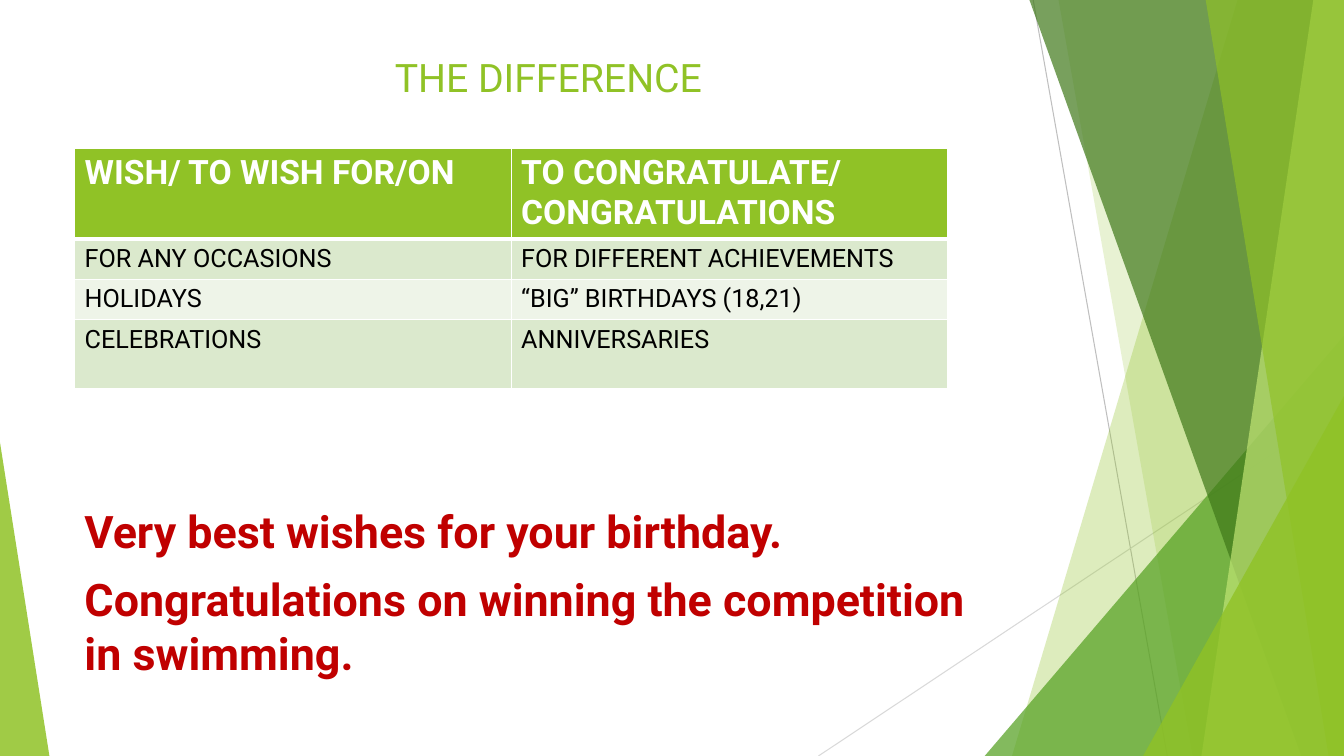
"""Build the slide comparing wishes with congratulations."""
import lxml.etree
import pptx
import pptx.dml.color
import pptx.enum.shapes
import pptx.enum.text
import pptx.oxml
import pptx.oxml.ns
import pptx.util
from dataclasses import dataclass

Pt = pptx.util.Pt
qn = pptx.oxml.ns.qn
SubElement = lxml.etree.SubElement


@dataclass(frozen=True)
class Theme:
    font: str = "Roboto"
    lime: str = "90C226"
    green: str = "54A021"
    forest: str = "3F7819"
    pale: str = "C0E474"
    silver: str = "BFBFBF"
    mist: str = "D9D9D9"
    white: str = "FFFFFF"
    black: str = "000000"
    red: str = "C00000"
    band_dark: str = "DBE9CD"
    band_light: str = "EEF4E8"
    title_size: int = 28
    header_size: int = 24
    cell_size: int = 18
    example_size: int = 32


theme = Theme()
WIDTH, HEIGHT = 960, 540


def rgb(value):
    return pptx.dml.color.RGBColor.from_string(value)


def set_font(para, size, colour, bold=False):
    para.font.name = theme.font
    para.font.size = Pt(size)
    para.font.bold = bold
    para.font.color.rgb = rgb(colour)


deck = pptx.Presentation()
deck.slide_width, deck.slide_height = Pt(WIDTH), Pt(HEIGHT)
page = deck.slides.add_slide(deck.slide_layouts[6])

for start_x, start_y, end_x, colour in [
    (738, 0, 833.8, theme.silver),
    (WIDTH, 290.2, 584.6, theme.mist),
]:
    line = page.shapes.add_connector(
        pptx.enum.shapes.MSO_CONNECTOR.STRAIGHT,
        Pt(start_x), Pt(start_y), Pt(end_x), Pt(HEIGHT))
    line.line.color.rgb = rgb(colour)
    line.line.width = Pt(0.75)
    SubElement(line._element.spPr, qn("a:effectLst"))

# panel: top-left x, bottom-left x; wedge: left, top, width, apex
facets = [
    ("panel", (884.2, 722.9), theme.lime, 30),
    ("panel", (756, 851.8), theme.lime, 20),
    ("wedge", (703.4, 239.8, 256.6, 1), theme.green, 72),
    ("panel", (735.1, 929.5), theme.forest, 70),
    ("panel", (938.2, 858.2), theme.pale, 70),
    ("panel", (861.1, 949), theme.lime, 65),
    ("wedge", (816.5, 283, 143.5, 1), theme.lime, 80),
    ("wedge", (0, 316.1, 35.3, 0), theme.lime, 85),
]
for kind, geometry, colour, opacity in facets:
    if kind == "panel":
        top_x, bottom_x = geometry
        outline = page.shapes.build_freeform(Pt(top_x), Pt(-0.7))
        outline.add_line_segments([
            (Pt(WIDTH), Pt(-0.7)), (Pt(WIDTH), Pt(HEIGHT)), (Pt(bottom_x), Pt(HEIGHT))])
        facet = outline.convert_to_shape()
    else:
        left, top, width, apex = geometry
        facet = page.shapes.add_shape(
            pptx.enum.shapes.MSO_SHAPE.ISOSCELES_TRIANGLE,
            Pt(left), Pt(top), Pt(width), Pt(HEIGHT - top))
        facet.adjustments[0] = apex
    facet.shadow.inherit = False
    facet.line.fill.background()
    facet.fill.solid()
    facet.fill.fore_color.rgb = rgb(colour)
    tint = facet._element.spPr.find(qn("a:solidFill"))[0]
    SubElement(tint, qn("a:alpha"), val=str(opacity * 1000))

title = page.shapes.add_textbox(Pt(53.3), Pt(20.2), Pt(676.8), Pt(54.7)).text_frame
title.word_wrap = True
title.vertical_anchor = pptx.enum.text.MSO_ANCHOR.BOTTOM
title.text = "THE DIFFERENCE"
title.paragraphs[0].alignment = pptx.enum.text.PP_ALIGN.CENTER
set_font(title.paragraphs[0], theme.title_size, theme.lime)

examples = page.shapes.add_textbox(Pt(53.3), Pt(356.4), Pt(676.8), Pt(67.7)).text_frame
examples.word_wrap = True
examples.text = ("Very best wishes for your birthday.\n"
                 "Congratulations on winning the competition in swimming.")
for para in examples.paragraphs:
    set_font(para, theme.example_size, theme.red, bold=True)
examples.paragraphs[1].space_before = Pt(10)

rows = [
    ("WISH/ TO WISH FOR/ON", "TO CONGRATULATE/ CONGRATULATIONS"),
    ("FOR ANY OCCASIONS", "FOR DIFFERENT ACHIEVEMENTS"),
    ("HOLIDAYS", "“BIG” BIRTHDAYS (18,21)"),
    ("CELEBRATIONS", "ANNIVERSARIES"),
]
row_heights = [62.2, 28.4, 28.4, 49]
row_fills = [theme.lime, theme.band_dark, theme.band_light, theme.band_dark]
table = page.shapes.add_table(
    len(rows), 2, Pt(53.3), Pt(106), Pt(623.6), Pt(sum(row_heights))).table
for row_index, labels in enumerate(rows):
    table.rows[row_index].height = Pt(row_heights[row_index])
    header = row_index == 0
    edges = {"lnL": 1, "lnR": 1,
             "lnT": 3 if row_index == 1 else 1, "lnB": 3 if header else 1}
    for column_index, label in enumerate(labels):
        cell = table.cell(row_index, column_index)
        cell.text = label
        set_font(cell.text_frame.paragraphs[0],
                 theme.header_size if header else theme.cell_size,
                 theme.white if header else theme.black, bold=header)
        properties = cell._tc.get_or_add_tcPr()
        for edge, weight in edges.items():
            border = SubElement(properties, qn(f"a:{edge}"), w=str(Pt(weight)))
            ink = SubElement(border, qn("a:solidFill"))
            SubElement(ink, qn("a:srgbClr"), val=theme.white)
        cell.fill.solid()
        cell.fill.fore_color.rgb = rgb(row_fills[row_index])

deck.save("out.pptx")
